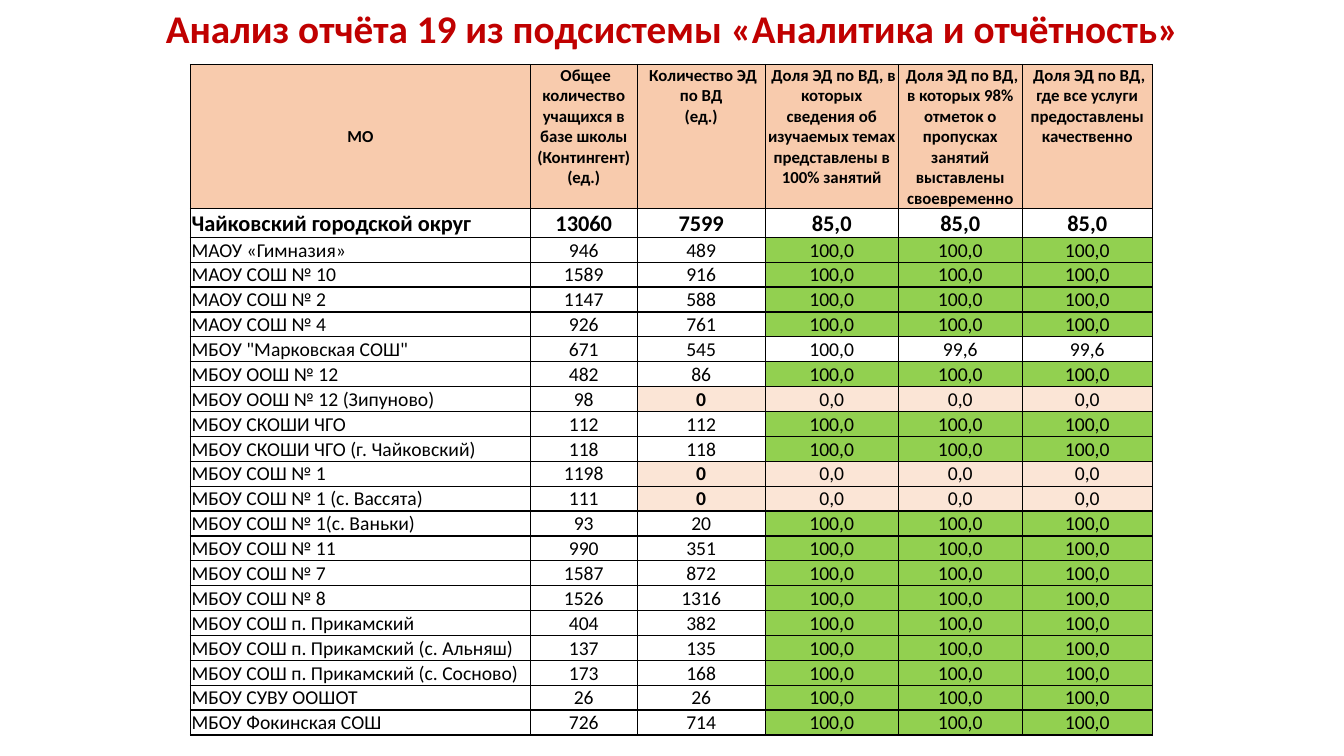
from typing import NamedTuple

from lxml import etree
from pptx import Presentation
from pptx import util as u
from pptx.dml.color import RGBColor
from pptx.enum import text
from pptx.oxml.ns import qn

SLIDE_WIDTH, SLIDE_HEIGHT = 13.33, 7.5
TABLE_LEFT, TABLE_TOP = 1.89, 0.64
COLUMN_WIDTHS = [3.37, 1.06, 1.27, 1.32, 1.23, 1.29]
HEADER_HEIGHT, TOTAL_HEIGHT, SCHOOL_HEIGHT = 1.41, 0.27, 0.24
INSET = 0.01
FONT = "Calibri"
BLACK, RED = "000000", "C00000"
PEACH, GREEN, PALE_PEACH = "F8CBAD", "92D050", "FBE5D6"
FULL = "100,0"

HEADERS = [
    "МО",
    " Общее количество учащихся в базе школы (Контингент)\v(ед.)",
    " Количество ЭД по ВД\v(ед.)",
    " Доля ЭД по ВД, в которых сведения об изучаемых темах представлены в 100% занятий",
    " Доля ЭД по ВД, в которых 98% отметок о пропусках занятий выставлены своевременно",
    " Доля ЭД по ВД, где все услуги предоставлены качественно",
]


class School(NamedTuple):
    name: str
    pupils: int
    diaries: int
    topics: str = FULL
    absences: str = FULL
    quality: str = FULL


NO_SHARES = ("0,0",) * 3
DISTRICT = School("Чайковский городской округ", 13060, 7599, "85,0", "85,0", "85,0")
SCHOOLS = [
    School("МАОУ «Гимназия»", 946, 489),
    School("МАОУ СОШ № 10", 1589, 916),
    School("МАОУ СОШ № 2", 1147, 588),
    School("МАОУ СОШ № 4", 926, 761),
    School('МБОУ "Марковская СОШ"', 671, 545, FULL, "99,6", "99,6"),
    School("МБОУ ООШ № 12", 482, 86),
    School("МБОУ ООШ № 12 (Зипуново)", 98, 0, *NO_SHARES),
    School("МБОУ СКОШИ ЧГО", 112, 112),
    School("МБОУ СКОШИ ЧГО (г. Чайковский)", 118, 118),
    School("МБОУ СОШ № 1", 1198, 0, *NO_SHARES),
    School("МБОУ СОШ № 1 (с. Вассята)", 111, 0, *NO_SHARES),
    School("МБОУ СОШ № 1(с. Ваньки)", 93, 20),
    School("МБОУ СОШ № 11", 990, 351),
    School("МБОУ СОШ № 7", 1587, 872),
    School("МБОУ СОШ № 8", 1526, 1316),
    School("МБОУ СОШ п. Прикамский", 404, 382),
    School("МБОУ СОШ п. Прикамский (с. Альняш)", 137, 135),
    School("МБОУ СОШ п. Прикамский (с. Сосново)", 173, 168),
    School("МБОУ СУВУ ООШОТ", 26, 26),
    School("МБОУ Фокинская СОШ", 726, 714),
]


def color(value: str) -> RGBColor:
    return RGBColor.from_string(value)


def format_paragraph(paragraph, size: int, bold: bool, ink: str, centered: bool) -> None:
    paragraph.alignment = text.PP_ALIGN.CENTER if centered else text.PP_ALIGN.LEFT
    font = paragraph.font
    font.name, font.size, font.bold = FONT, u.Pt(size), bold
    font.color.rgb = color(ink)


def add_borders(cell) -> None:
    properties = cell._tc.get_or_add_tcPr()
    for position, side in enumerate(("lnL", "lnR", "lnT", "lnB")):
        line = etree.Element(qn(f"a:{side}"), w=str(u.Pt(1)))
        fill = etree.SubElement(line, qn("a:solidFill"))
        etree.SubElement(fill, qn("a:srgbClr"), val=BLACK)
        properties.insert(position, line)


def fill_cell(cell, content: str, size: int, bold: bool = False, fill: str = "",
              centered: bool = True, middle: bool = True) -> None:
    cell.text = content
    cell.margin_left = cell.margin_right = cell.margin_top = u.Inches(INSET)
    cell.margin_bottom = 0
    cell.vertical_anchor = text.MSO_ANCHOR.MIDDLE if middle else text.MSO_ANCHOR.TOP
    format_paragraph(cell.text_frame.paragraphs[0], size, bold, BLACK, centered)
    if fill:
        cell.fill.solid()
        cell.fill.fore_color.rgb = color(fill)
    else:
        cell.fill.background()
    add_borders(cell)


def school_fill(school: School, column: int) -> str:
    """Green shares when all are full; pale peach from the diary count on when it is zero."""
    if school.diaries == 0 and column >= 2:
        return PALE_PEACH
    if column >= 3 and set(school[3:]) == {FULL}:
        return GREEN
    return ""


def add_title(slide, wording: str) -> None:
    title = slide.shapes.title
    title.left, title.top = 0, u.Inches(-0.01)
    title.width, title.height = u.Inches(SLIDE_WIDTH), u.Inches(0.57)
    frame = title.text_frame
    frame.text = wording
    frame.word_wrap = True
    frame.auto_size = text.MSO_AUTO_SIZE.NONE
    frame.vertical_anchor = text.MSO_ANCHOR.TOP
    format_paragraph(frame.paragraphs[0], 28, True, RED, True)


def add_report(slide) -> None:
    heights = [HEADER_HEIGHT, TOTAL_HEIGHT] + [SCHOOL_HEIGHT] * len(SCHOOLS)
    report = slide.shapes.add_table(
        len(heights), len(COLUMN_WIDTHS), u.Inches(TABLE_LEFT), u.Inches(TABLE_TOP),
        u.Inches(sum(COLUMN_WIDTHS)), u.Inches(sum(heights))).table
    report.first_row = report.horz_banding = False
    for column, width in zip(report.columns, COLUMN_WIDTHS):
        column.width = u.Inches(width)
    for row, height in zip(report.rows, heights):
        row.height = u.Inches(height)

    for column, heading in enumerate(HEADERS):
        fill_cell(report.cell(0, column), heading, 12, True, PEACH, middle=column == 0)
    for column, value in enumerate(DISTRICT):
        fill_cell(report.cell(1, column), str(value), 16, True,
                  centered=column > 0, middle=column > 0)
    for row, school in enumerate(SCHOOLS, start=2):
        for column, value in enumerate(school):
            fill_cell(report.cell(row, column), str(value), 14, value == 0,
                      school_fill(school, column), centered=column > 0)


def main() -> None:
    deck = Presentation()
    deck.slide_width, deck.slide_height = u.Inches(SLIDE_WIDTH), u.Inches(SLIDE_HEIGHT)
    slide = deck.slides.add_slide(deck.slide_layouts[5])
    add_title(slide, "Анализ отчёта 19 из подсистемы «Аналитика и отчётность»")
    add_report(slide)
    deck.save("out.pptx")


if __name__ == "__main__":
    main()
